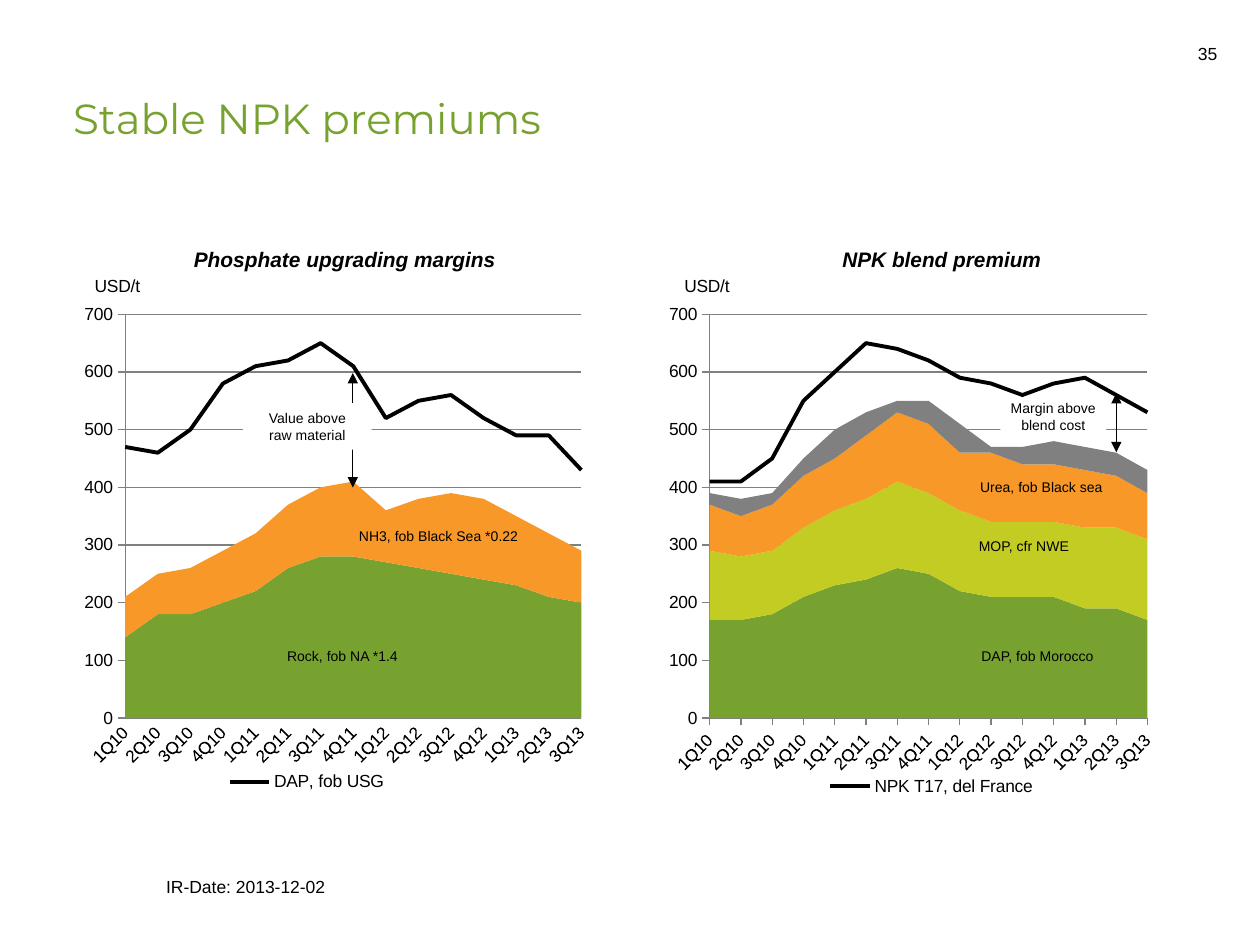
import pptx
import pptx.chart.data
import pptx.dml.color
import pptx.enum.chart
import pptx.enum.shapes
import pptx.enum.text
import pptx.oxml
import pptx.oxml.ns
import pptx.util
from pptx.util import Inches, Pt

RGB = pptx.dml.color.RGBColor
BLACK = RGB(0x00, 0x00, 0x00)
WHITE = RGB(0xFF, 0xFF, 0xFF)
GREEN = RGB(0x78, 0xA2, 0x2F)
LIME = RGB(0xC2, 0xCC, 0x23)
ORANGE = RGB(0xF8, 0x98, 0x28)
GREY = RGB(0x80, 0x80, 0x80)

# Content
QUARTERS = [f"{q}Q{y}" for y in (10, 11, 12, 13) for q in (1, 2, 3, 4)][:15]
CHARTS = [
    dict(title="Phosphate upgrading margins", left=0.67, ticks=False, format="General",
         plot=(0.075, 0.193, 0.88, 0.641), title_at=(0.2, 0.08), unit_at=(0.01, 0.125),
         legend_at=(0.25, 0.91, 0.35, 0.05),
         areas=[
             (GREEN, [140, 180, 180, 200, 220, 260, 280, 280, 270, 260, 250, 240, 230, 210, 200]),
             (ORANGE, [70, 70, 80, 90, 100, 110, 120, 130, 90, 120, 140, 140, 120, 110, 90])],
         line=("DAP, fob USG",
               [470, 460, 500, 580, 610, 620, 650, 610, 520, 550, 560, 520, 490, 490, 430])),
    dict(title="NPK blend premium", left=5.31, ticks=True, format="0",
         plot=(0.07, 0.193, 0.849, 0.641), title_at=(0.32, 0.08), unit_at=(0.015, 0.125),
         legend_at=(0.29, 0.917, 0.42, 0.05),
         areas=[
             (GREEN, [170, 170, 180, 210, 230, 240, 260, 250, 220, 210, 210, 210, 190, 190, 170]),
             (LIME, [120, 110, 110, 120, 130, 140, 150, 140, 140, 130, 130, 130, 140, 140, 140]),
             (ORANGE, [80, 70, 80, 90, 90, 110, 120, 120, 100, 120, 100, 100, 100, 90, 80]),
             (GREY, [20, 30, 20, 30, 50, 40, 20, 40, 50, 10, 30, 40, 40, 40, 40])],
         line=("NPK T17, del France",
               [410, 410, 450, 550, 600, 650, 640, 620, 590, 580, 560, 580, 590, 560, 530])),
]
ARROWS = [(2.8, 2.96, 3.87), (8.86, 3.12, 3.59)]  # x, top, bottom
CALLOUTS = [  # text, box, inset left/right, inset top/bottom
    ("Value above\nraw material", (1.93, 3.2, 1.02, 0.37), 0.1, 0.05),
    ("Margin above blend cost", (7.94, 3.17, 0.84, 0.27), 0, 0),
]
LABELS = [  # text, box, size
    ("Rock, fob NA *1.4", (2.18, 5.09, 1.1, 0.24), 8),
    ("NH3, fob Black Sea *0.22", (2.75, 4.14, 1.48, 0.24), 8),
    ("DAP, fob Morocco", (7.69, 5.09, 1.12, 0.24), 8),
    ("MOP, cfr NWE", (7.67, 4.22, 0.94, 0.24), 8),
    ("Urea, fob Black sea", (7.68, 3.75, 1.19, 0.24), 8),
    ("35", (9.41, 0.29, 0.37, 0.27), 10),
    ("IR-Date: 2013-12-02", (1.22, 6.9, 2.91, 0.27), 10),
]


def xml(tag, inner=""):
    return pptx.oxml.parse_xml(f"<{tag} {pptx.oxml.ns.nsdecls('c', 'a')}>{inner}</{tag}>")


def layout(box, inner=False):
    target = '<c:layoutTarget val="inner"/>' if inner else ""
    modes = "".join(f'<c:{k}Mode val="edge"/>' for k in "xy")
    values = "".join(f'<c:{k} val="{v}"/>' for k, v in zip("xywh", box))
    return xml("c:layout", f"<c:manualLayout>{target}{modes}{values}</c:manualLayout>")


def place(element, new, after):
    """Put a layout into a chart part, right after its child named `after`."""
    for old in element.findall(pptx.oxml.ns.qn("c:layout")):
        element.remove(old)
    if after:
        element.find(pptx.oxml.ns.qn(after)).addnext(new)
    else:
        element.insert(0, new)


def style(font, size, color=BLACK, name="Arial"):
    font.size, font.name = Pt(size), name
    font.color.rgb = color


def set_text(tf, text, size, color=BLACK, name="Arial", align=None):
    tf.text = text
    for p in tf.paragraphs:
        p.alignment = align
        for r in p.runs:
            style(r.font, size, color, name)


def add_chart(slide, info):
    data = pptx.chart.data.CategoryChartData(number_format="0")
    data.categories = QUARTERS
    for i, (_, values) in enumerate(info["areas"], 1):
        data.add_series(f"Series {i}", values)
    data.add_series(*info["line"])
    chart = slide.shapes.add_chart(
        pptx.enum.chart.XL_CHART_TYPE.AREA_STACKED, Inches(info["left"]), Inches(1.53),
        Inches(4.13), Inches(5), data).chart
    style(chart.font, 10)
    plot = chart.plots[0]
    plot.vary_by_categories = False
    for series, (color, _) in zip(plot.series, info["areas"]):
        series.format.fill.solid()
        series.format.fill.fore_color.rgb = color
        series.format.line.fill.background()

    # The last series becomes a line on the same axes
    area = chart._chartSpace.find(".//" + pptx.oxml.ns.qn("c:areaChart"))
    last = area.findall(pptx.oxml.ns.qn("c:ser"))[-1]
    axis_ids = "".join(f'<c:axId val="{a.get("val")}"/>'
                       for a in area.findall(pptx.oxml.ns.qn("c:axId")))
    lines = xml("c:lineChart", '<c:grouping val="standard"/><c:varyColors val="0"/>'
                               f'<c:marker val="1"/>{axis_ids}')
    lines.insert(2, last)
    area.addnext(lines)
    series = chart.plots[1].series[0]
    series.smooth = False
    series.marker.style = pptx.enum.chart.XL_MARKER_STYLE.NONE
    series.format.line.color.rgb = BLACK
    series.format.line.width = Pt(2.25)

    # Axes
    tick = pptx.enum.chart.XL_TICK_MARK
    cat, val = chart.category_axis, chart.value_axis
    val.minimum_scale, val.maximum_scale, val.major_unit = 0, 700, 100
    val.has_major_gridlines = True
    val.major_tick_mark = tick.OUTSIDE
    val.tick_labels.number_format = info["format"]
    val.tick_labels.number_format_is_linked = False
    cat.major_tick_mark = tick.OUTSIDE if info["ticks"] else tick.NONE
    cat.has_major_gridlines = False
    for part in (cat, val, val.major_gridlines):
        part.format.line.color.rgb = GREY
        part.format.line.width = Pt(0.75)
    for axis in (cat, val):
        axis.minor_tick_mark = tick.NONE
        style(axis.tick_labels.font, 10)
    cat._element.find(".//" + pptx.oxml.ns.qn("a:bodyPr")).set("rot", "-2700000")
    val._element.find(pptx.oxml.ns.qn("c:crossBetween")).set("val", "midCat")

    # Titles
    set_text(chart.chart_title.text_frame, info["title"], 12)
    font = chart.chart_title.text_frame.paragraphs[0].runs[0].font
    font.bold = font.italic = True
    set_text(val.axis_title.text_frame, "USD/t", 10)
    val.axis_title.text_frame.paragraphs[0].runs[0].font.bold = False
    val.axis_title.text_frame._txBody.bodyPr.set("rot", "0")
    place(chart.chart_title._element, layout(info["title_at"]), "c:tx")
    place(val.axis_title._element, layout(info["unit_at"]), "c:tx")

    # Legend shows the line only
    chart.has_legend = True
    legend = chart.legend
    legend.position = pptx.enum.chart.XL_LEGEND_POSITION.BOTTOM
    legend.include_in_layout = False
    style(legend.font, 10)
    place(legend._element, layout(info["legend_at"]), "c:legendPos")
    for i in reversed(range(len(info["areas"]))):
        legend._element.find(pptx.oxml.ns.qn("c:legendPos")).addnext(
            xml("c:legendEntry", f'<c:idx val="{i}"/><c:delete val="1"/>'))
    place(area.getparent(), layout(info["plot"], inner=True), None)


prs = pptx.Presentation()
prs.slide_width, prs.slide_height = Inches(10), Inches(7.5)
slide = prs.slides.add_slide(prs.slide_layouts[6])

# Title
tf = slide.shapes.add_textbox(*map(Inches, (0.58, 0.25, 6.94, 0.93))).text_frame
tf.word_wrap = True
tf.margin_left = 0
tf.vertical_anchor = pptx.enum.text.MSO_ANCHOR.BOTTOM
set_text(tf, "Stable NPK premiums", 24, GREEN, "Montserrat")

for info in CHARTS:
    add_chart(slide, info)

# Double-headed arrows
for x, top, bottom in ARROWS:
    arrow = slide.shapes.add_connector(pptx.enum.shapes.MSO_CONNECTOR.STRAIGHT,
                                       Inches(x), Inches(top), Inches(x), Inches(bottom))
    arrow.line.color.rgb = BLACK
    arrow.line.width = Pt(0.75)
    for end in ("a:headEnd", "a:tailEnd"):
        head = xml(end)
        head.set("type", "triangle")
        arrow.line._get_or_add_ln().append(head)
    arrow._element.spPr.append(xml("a:effectLst"))

# White callouts
for text, box, side, edge in CALLOUTS:
    sp = slide.shapes.add_shape(pptx.enum.shapes.MSO_SHAPE.RECTANGLE, *map(Inches, box))
    sp.shadow.inherit = False
    sp.fill.solid()
    sp.fill.fore_color.rgb = WHITE
    sp.line.fill.background()
    tf = sp.text_frame
    tf.word_wrap = True
    tf.margin_left = tf.margin_right = Inches(side)
    tf.margin_top = tf.margin_bottom = Inches(edge)
    set_text(tf, text, 8, align=pptx.enum.text.PP_ALIGN.CENTER)

# Area labels, page number and date
for text, box, size in LABELS:
    tf = slide.shapes.add_textbox(*map(Inches, box)).text_frame
    tf.word_wrap = False
    set_text(tf, text, size)

prs.save("out.pptx")
